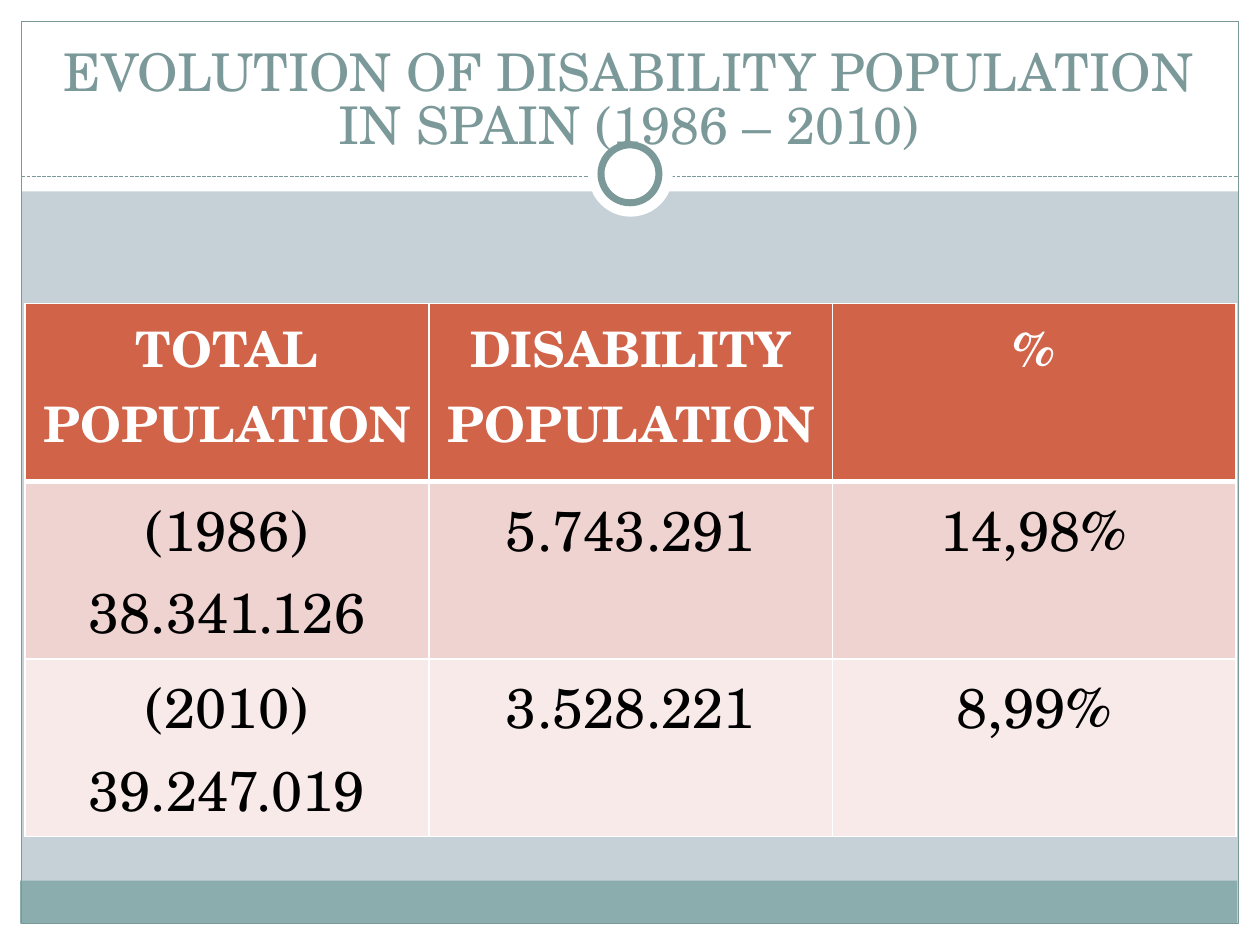
import pptx
import pptx.dml.color
import pptx.enum.dml
import pptx.enum.shapes
import pptx.enum.text
import pptx.oxml
import pptx.oxml.ns
import pptx.util
from pptx.util import Inches

FONT = "TeX Gyre Schola"
WHITE, TEAL = "FFFFFF", "7C999A"
TITLE = "EVOLUTION OF DISABILITY POPULATION IN SPAIN (1986 – 2010)"
ROWS = [
    ("TOTAL POPULATION", "DISABILITY POPULATION", "%"),
    ("(1986) 38.341.126", "5.743.291", "14,98%"),
    ("(2010) 39.247.019", "3.528.221", "8,99%"),
]
ROW_STYLES = [
    {"fill": "D16349", "size": 28, "color": WHITE, "bold": True},
    {"fill": "EED3D0", "size": 32, "color": "000000", "bold": False},
    {"fill": "F7EAE9", "size": 32, "color": "000000", "bold": False},
]
RULE_WIDTHS = [1, 3, 1, 1]
BANDS = [
    (0, 7.33, 10, 0.17, WHITE),
    (0, 0, 10, 1.52, WHITE),
    (0, 0, 0.17, 7.5, WHITE),
    (9.83, 0, 0.17, 7.5, WHITE),
    (0.16, 6.99, 9.66, 0.34, "8CADAE"),
]
SHAPES = pptx.enum.shapes.MSO_SHAPE


def rgb(value):
    return pptx.dml.color.RGBColor.from_string(value)


def add_shape(slide, kind, box, fill=None, line=None, width=0.75):
    shape = slide.shapes.add_shape(kind, *map(Inches, box))
    shape.shadow.inherit = False
    if fill:
        shape.fill.solid()
        shape.fill.fore_color.rgb = rgb(fill)
    else:
        shape.fill.background()
    if line:
        shape.line.color.rgb = rgb(line)
        shape.line.width = pptx.util.Pt(width)
    else:
        shape.line.fill.background()


def add_divider(slide):
    line = slide.shapes.add_connector(
        pptx.enum.shapes.MSO_CONNECTOR.STRAIGHT, *map(Inches, (0.17, 1.4, 9.83, 1.4)))
    line.line.color.rgb = rgb(TEAL)
    line.line.width = pptx.util.Pt(0.75)
    line.line.dash_style = pptx.enum.dml.MSO_LINE.SQUARE_DOT
    properties = line._element.spPr
    properties.append(properties.makeelement(pptx.oxml.ns.qn("a:effectLst"), {}))


def write(frame, text, size, color, bold=False):
    paragraph = frame.paragraphs[0]
    paragraph.alignment = pptx.enum.text.PP_ALIGN.CENTER
    run = paragraph.add_run()
    run.text = text
    run.font.name = FONT
    run.font.size = pptx.util.Pt(size)
    run.font.bold = bold
    run.font.color.rgb = rgb(color)
    return paragraph


def set_borders(cell, top, bottom):
    properties = cell._tc.get_or_add_tcPr()
    widths = {"lnL": 1, "lnR": 1, "lnT": top, "lnB": bottom}
    for index, (tag, width) in enumerate(widths.items()):
        properties.insert(index, pptx.oxml.parse_xml(
            f'<a:{tag} {pptx.oxml.ns.nsdecls("a")} w="{pptx.util.Pt(width)}"><a:solidFill>'
            f'<a:srgbClr val="{WHITE}"/></a:solidFill></a:{tag}>'))


def add_title(slide):
    title = slide.shapes.title
    title.left, title.top, title.width, title.height = map(Inches, (0.33, 0.21, 9.33, 1.02))
    frame = title.text_frame
    frame.word_wrap = True
    frame.auto_size = pptx.enum.text.MSO_AUTO_SIZE.NONE
    frame.vertical_anchor = pptx.enum.text.MSO_ANCHOR.BOTTOM
    frame.margin_top = frame.margin_bottom = 0
    paragraph = write(frame, TITLE, 29.7, TEAL)
    paragraph.line_spacing = 0.85
    paragraph.space_before = pptx.util.Pt(0)
    slide.shapes._spTree.append(title._element)


def add_population_table(slide):
    row_height = 1.41
    table = slide.shapes.add_table(
        len(ROWS), len(ROWS[0]), Inches(0.2), Inches(2.41),
        Inches(9.61), Inches(row_height * len(ROWS))).table
    for row_index, (texts, style) in enumerate(zip(ROWS, ROW_STYLES)):
        table.rows[row_index].height = Inches(row_height)
        for column_index, text in enumerate(texts):
            cell = table.cell(row_index, column_index)
            cell.fill.solid()
            cell.fill.fore_color.rgb = rgb(style["fill"])
            set_borders(cell, *RULE_WIDTHS[row_index:row_index + 2])
            write(cell.text_frame, text, style["size"], style["color"], style["bold"])


def main():
    """Build the slide on disability population in Spain."""
    presentation = pptx.Presentation()
    presentation.slide_width, presentation.slide_height = Inches(10), Inches(7.5)
    slide = presentation.slides.add_slide(presentation.slide_layouts[5])
    slide.background.fill.solid()
    slide.background.fill.fore_color.rgb = rgb("C5D1D7")
    for *box, fill in BANDS:
        add_shape(slide, SHAPES.RECTANGLE, box, fill)
    add_shape(slide, SHAPES.RECTANGLE, (0.17, 0.17, 9.66, 7.16), line=TEAL)
    add_divider(slide)
    add_shape(slide, SHAPES.OVAL, (4.67, 1.05, 0.67, 0.67), WHITE)
    add_shape(slide, SHAPES.OVAL, (4.77, 1.15, 0.46, 0.46), WHITE, TEAL, 4)
    add_title(slide)
    add_population_table(slide)
    presentation.save("out.pptx")


if __name__ == "__main__":
    main()
